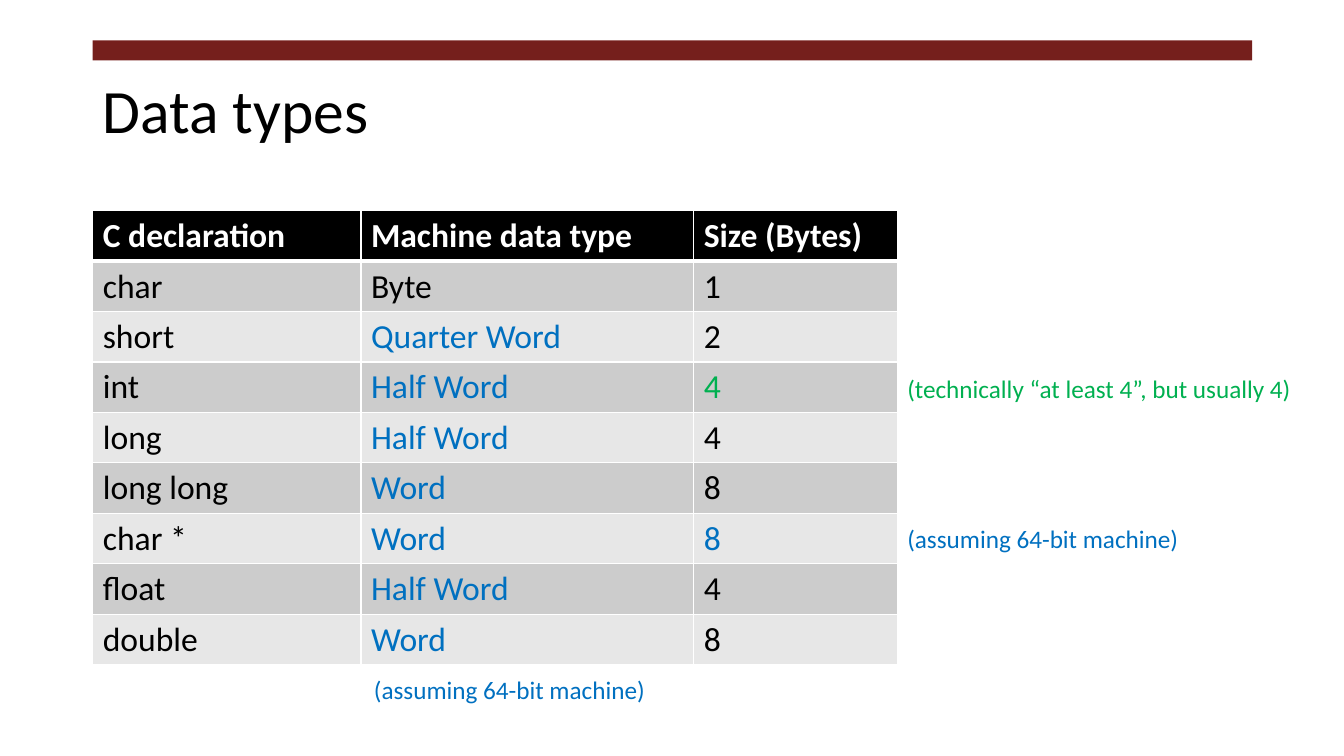
from lxml.etree import SubElement
from pptx import Presentation
from pptx.dml.color import RGBColor
from pptx.enum.shapes import MSO_SHAPE
from pptx.enum.text import MSO_ANCHOR, MSO_AUTO_SIZE
from pptx.oxml.ns import qn
from pptx.util import Inches, Pt

COLORS = {
    "maroon": "751F1C",
    "black": "000000",
    "white": "FFFFFF",
    "blue": "0070C0",
    "green": "00B050",
    "dark band": "CCCCCC",
    "light band": "E7E7E7",
}
LEFT = 0.92
TABLE_TOP = 2.09
ROW_HEIGHT = 0.5
COLUMN_WIDTHS = [2.66, 3.3, 2.02]
HEADERS = ["C declaration", "Machine data type", "Size (Bytes)"]
DATA_TYPES = [
    ("char", "Byte", "1"),
    ("short", "Quarter Word", "2"),
    ("int", "Half Word", "4"),
    ("long", "Half Word", "4"),
    ("long long", "Word", "8"),
    ("char *", "Word", "8"),
    ("float", "Half Word", "4"),
    ("double", "Word", "8"),
]
SIZE_COLORS = {"int": "green", "char *": "blue"}
NOTES = [
    (8.9, 3.65, 4.05, "(technically “at least 4”, but usually 4)", "green"),
    (8.9, 5.14, 2.92, "(assuming 64-bit machine)", "blue"),
    (3.61, 6.64, 2.92, "(assuming 64-bit machine)", "blue"),
]


def color(name):
    return RGBColor.from_string(COLORS[name])


class SlideBuilder:
    def __init__(self, page, font_name):
        self.page = page
        self.font_name = font_name

    def style(self, para, size, color_name, bold=False):
        para.font.name = self.font_name
        para.font.size = Pt(size)
        para.font.bold = bold
        para.font.color.rgb = color(color_name)

    def bar(self, left, top, width, height, fill):
        bar = self.page.shapes.add_shape(
            MSO_SHAPE.RECTANGLE, Inches(left), Inches(top), Inches(width), Inches(height))
        bar.shadow.inherit = False
        bar.fill.solid()
        bar.fill.fore_color.rgb = color(fill)
        bar.line.fill.background()

    def text(self, left, top, width, height, words, size, color_name):
        box = self.page.shapes.add_textbox(
            Inches(left), Inches(top), Inches(width), Inches(height))
        para = box.text_frame.paragraphs[0]
        para.text = words
        self.style(para, size, color_name)
        return box.text_frame

    def title(self, left, top, width, height, words):
        frame = self.text(left, top, width, height, words, 44, "black")
        frame.word_wrap = True
        frame.vertical_anchor = MSO_ANCHOR.MIDDLE
        frame.paragraphs[0].line_spacing = 0.9

    def note(self, left, top, width, words, color_name):
        frame = self.text(left, top, width, 0.4, words, 18, color_name)
        frame.word_wrap = False
        frame.auto_size = MSO_AUTO_SIZE.SHAPE_TO_FIT_TEXT

    def borders(self, cell, widths):
        """Draw white cell borders; widths maps each side (L, R, T, B) to points."""
        properties = cell._tc.get_or_add_tcPr()
        for side, width in widths.items():
            line = SubElement(properties, qn(f"a:ln{side}"), w=str(Pt(width)))
            fill = SubElement(line, qn("a:solidFill"))
            SubElement(fill, qn("a:srgbClr"), val=COLORS["white"])

    def cell(self, cell, words, fill, color_name, bold, top_line, bottom_line):
        cell.text = words
        self.style(cell.text_frame.paragraphs[0], 24, color_name, bold)
        self.borders(cell, {"L": 1, "R": 1, "T": top_line, "B": bottom_line})
        cell.fill.solid()
        cell.fill.fore_color.rgb = color(fill)

    def type_table(self, left, top):
        rows = [HEADERS, *DATA_TYPES]
        table = self.page.shapes.add_table(
            len(rows), len(HEADERS), Inches(left), Inches(top),
            Inches(sum(COLUMN_WIDTHS)), Inches(ROW_HEIGHT * len(rows))).table
        for column, width in zip(table.columns, COLUMN_WIDTHS):
            column.width = Inches(width)
        for index, row in enumerate(rows):
            header = index == 0
            if header:
                fill, text_colors = "black", ["white"] * 3
            else:
                fill = "dark band" if index % 2 else "light band"
                type_color = "black" if row[1] == "Byte" else "blue"
                text_colors = ["black", type_color, SIZE_COLORS.get(row[0], "black")]
            for column, (words, text_color) in enumerate(zip(row, text_colors)):
                self.cell(table.cell(index, column), words, fill, text_color, header,
                          top_line=3 if index == 1 else 1, bottom_line=3 if header else 1)


def main():
    deck = Presentation()
    deck.slide_width, deck.slide_height = Inches(13.33), Inches(7.5)
    builder = SlideBuilder(deck.slides.add_slide(deck.slide_layouts[6]), "Calibri")
    builder.bar(LEFT, 0.4, 11.5, 0.2, "maroon")
    builder.title(LEFT, 0.4, 11.5, 1.45, "Data types")
    builder.type_table(LEFT, TABLE_TOP)
    for note in NOTES:
        builder.note(*note)
    deck.save("out.pptx")


if __name__ == "__main__":
    main()
